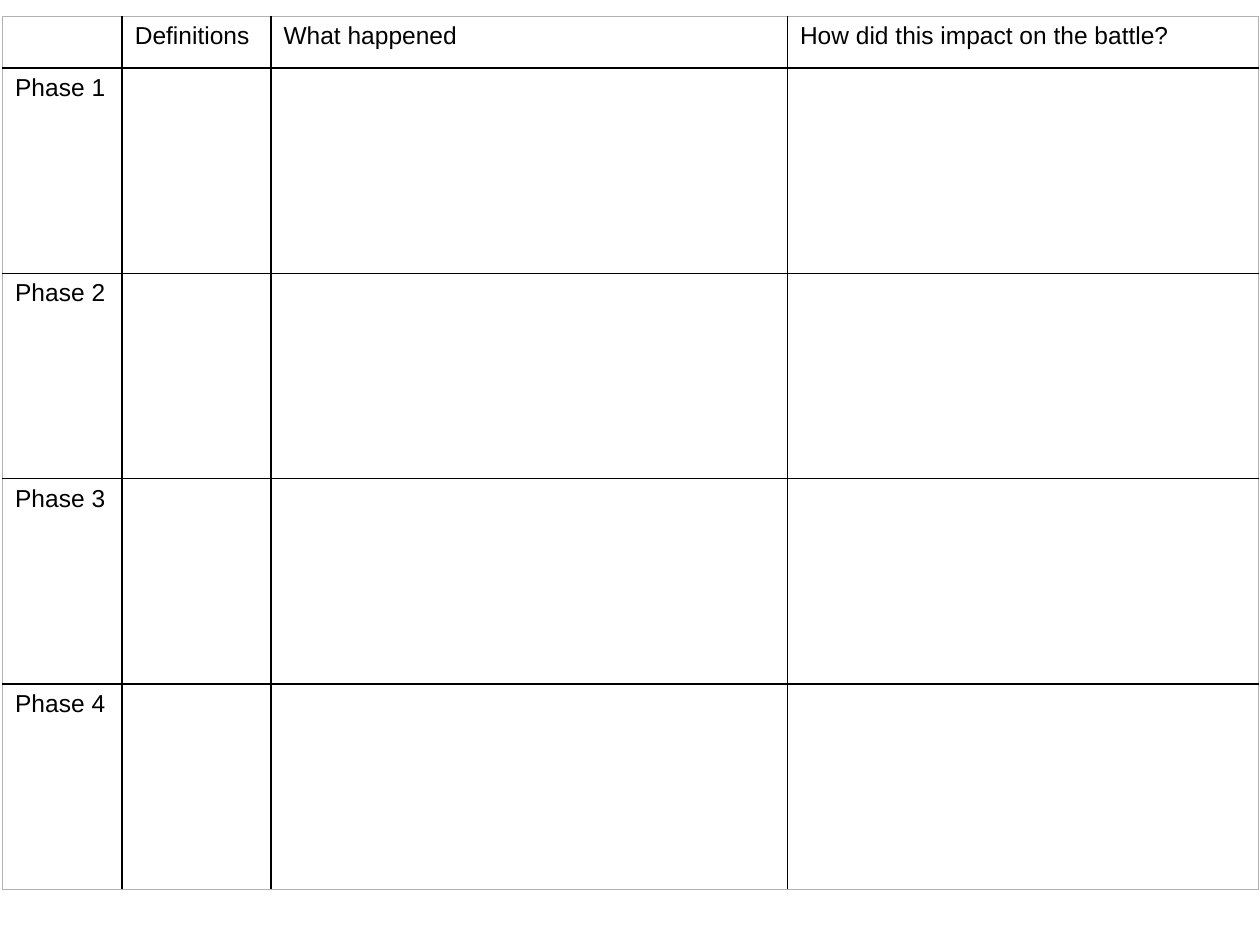
from lxml import etree
from pptx import Presentation
from pptx.dml.color import RGBColor
from pptx.oxml.ns import qn
from pptx.util import Inches, Pt

COLORS = {"text": "000000", "inner": "000000", "outer": "B2B2B2", "paper": "FFFFFF"}
HEADINGS = ["", "Definitions", "What happened", "How did this impact on the battle?"]
PHASE_COUNT = 4
COLUMN_WIDTHS = [0.95, 1.18, 4.1, 3.74]
HEADING_HEIGHT = 0.41
PHASE_HEIGHT = 1.63


class Worksheet:
    """Holds the text style and the current slide."""

    def __init__(self, slide, font="Arial", size=14, border=1):
        self.slide = slide
        self.font = font
        self.size = Pt(size)
        self.border = Pt(border)

    def add_grid(self, left, top, widths, heights, rows):
        frame = self.slide.shapes.add_table(
            len(heights), len(widths), Inches(left), Inches(top),
            Inches(sum(widths)), Inches(sum(heights)))
        grid = frame.table
        grid.first_row = grid.horz_banding = False
        for column, width in zip(grid.columns, widths):
            column.width = Inches(width)
        for row, height in zip(grid.rows, heights):
            row.height = Inches(height)
        last_row, last_column = len(heights) - 1, len(widths) - 1
        for r, texts in enumerate(rows):
            for c, text in enumerate(texts):
                outer_sides = {"L": c == 0, "R": c == last_column,
                               "T": r == 0, "B": r == last_row}
                self.format_cell(grid.cell(r, c), text, outer_sides)

    def format_cell(self, cell, text, outer_sides):
        cell.text = text
        font = cell.text_frame.paragraphs[0].font
        font.name = self.font
        font.size = self.size
        font.color.rgb = RGBColor.from_string(COLORS["text"])
        for side, is_outer in outer_sides.items():
            self.add_border(cell, side, COLORS["outer" if is_outer else "inner"])
        cell.fill.solid()
        cell.fill.fore_color.rgb = RGBColor.from_string(COLORS["paper"])

    def add_border(self, cell, side, color):
        properties = cell._tc.get_or_add_tcPr()
        line = etree.SubElement(properties, qn(f"a:ln{side}"), w=str(self.border))
        fill = etree.SubElement(line, qn("a:solidFill"))
        etree.SubElement(fill, qn("a:srgbClr"), val=color)


def main():
    deck = Presentation()
    deck.slide_width, deck.slide_height = Inches(10), Inches(7.5)
    sheet = Worksheet(deck.slides.add_slide(deck.slide_layouts[6]))
    phases = [[f"Phase {n}", "", "", ""] for n in range(1, PHASE_COUNT + 1)]
    heights = [HEADING_HEIGHT] + [PHASE_HEIGHT] * PHASE_COUNT
    sheet.add_grid(0.02, 0.13, COLUMN_WIDTHS, heights, [HEADINGS] + phases)
    deck.save("out.pptx")


if __name__ == "__main__":
    main()
